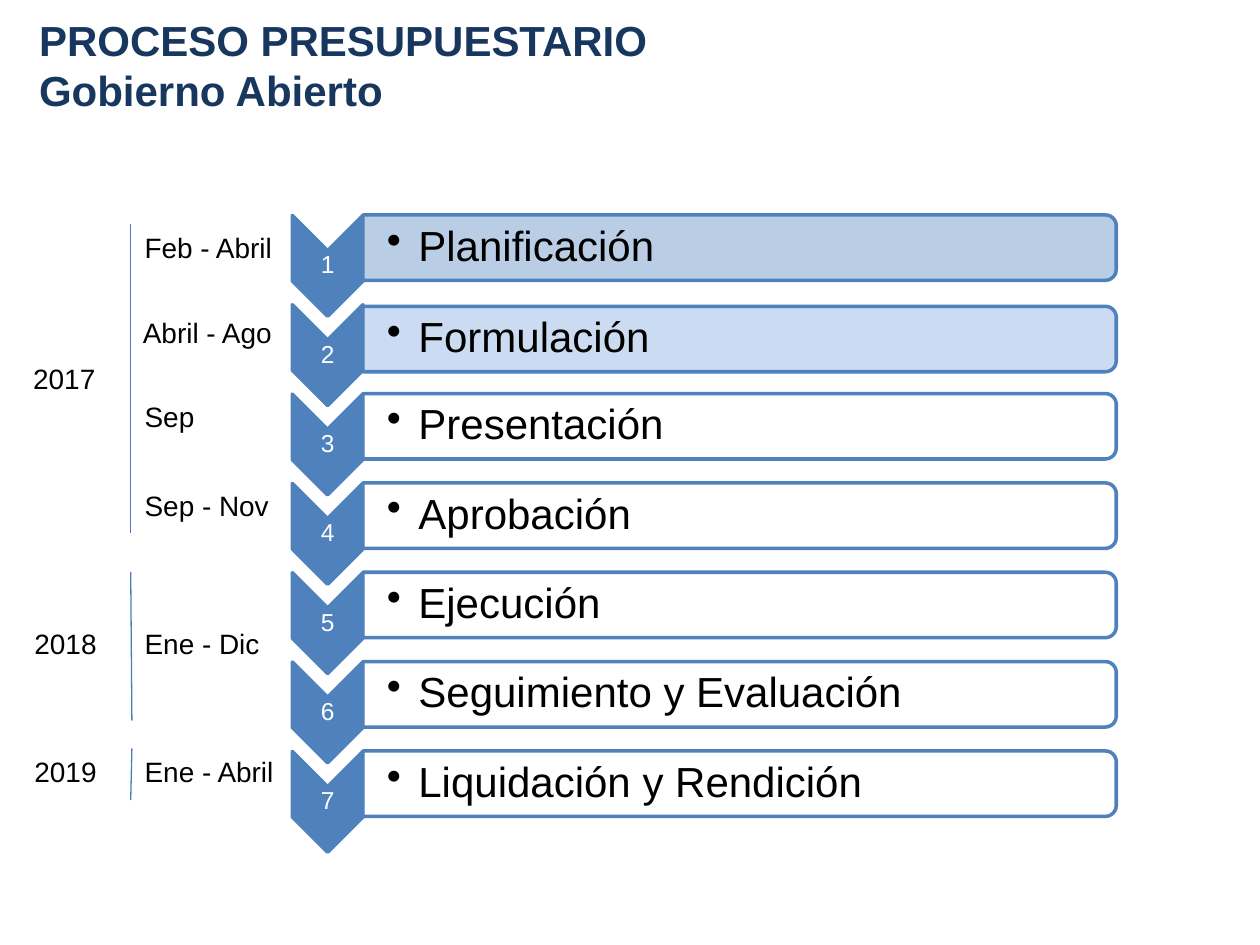
import pptx
import pptx.dml.color
import pptx.enum.shapes
import pptx.enum.text
import pptx.oxml.ns
import pptx.util
from lxml import etree

Pt = pptx.util.Pt
ALIGN = pptx.enum.text.PP_ALIGN
ANCHOR = pptx.enum.text.MSO_ANCHOR
PRESET = pptx.enum.shapes.MSO_SHAPE
FONT = "Arial"
COLORS = {
    "title": "17375E",
    "accent": "4F81BD",
    "bracket": "4B7EBC",
    "planning": "B9CDE5",
    "formulation": "C6D9F1",
    "white": "FFFFFF",
    "black": "000000",
}

ROW_PITCH = 51.05
FIRST_CHEVRON_Y = 151.9
FIRST_BAR_Y = 141.5
CHEVRON_X = 187.2
BAR_X = 422.6

# Name, fill, fill opacity in percent, vertical shift of the bar
STAGES = [
    ("Planificación", "planning", 100, 0),
    ("Formulación", "formulation", 90, 1.2),
    ("Presentación", "white", 90, 0),
    ("Aprobación", "white", 90, 0),
    ("Ejecución", "white", 90, 0),
    ("Seguimiento y Evaluación", "white", 90, 0),
    ("Liquidación y Rendición", "white", 90, 0),
]
# Label, left, top
MONTHS = [
    ("Feb - Abril", 75.6, 128.2),
    ("Abril - Ago", 74.6, 177),
    ("Sep", 75.6, 224.9),
    ("Sep - Nov", 75.6, 275.8),
    ("Ene - Dic", 75.6, 354.5),
    ("Ene - Abril", 75.6, 427.7),
]
# Label, left, top, start and end of the bracket line
YEARS = [
    ("2017", 2.9, 203, (74.7, 128.2), (74.7, 304.6)),
    ("2018", 3.6, 354.5, (74.7, 326.9), (75.4, 411.8)),
    ("2019", 3.6, 427.7, (75.4, 427.7), (74.7, 457.2)),
]


def rgb(name):
    return pptx.dml.color.RGBColor.from_string(COLORS[name])


def format_runs(paragraph, size, color, bold=False):
    for run in paragraph.runs:
        run.font.name = FONT
        run.font.size = Pt(size)
        run.font.bold = bold
        run.font.color.rgb = rgb(color)


def add_title(slide, text):
    title = slide.shapes.title
    title.left, title.top, title.width, title.height = Pt(15.1), Pt(0), Pt(476), Pt(74.2)
    frame = title.text_frame
    frame.text = text
    frame.auto_size = pptx.enum.text.MSO_AUTO_SIZE.NONE
    frame.vertical_anchor = ANCHOR.MIDDLE
    paragraph = frame.paragraphs[0]
    paragraph.alignment = ALIGN.LEFT
    format_runs(paragraph, 24, "title", bold=True)


def add_text(slide, text, left, top, width, height, size=16, color="black",
             align=ALIGN.LEFT, anchor=ANCHOR.TOP, margins=(7.2, 3.6, 7.2, 3.6)):
    box = slide.shapes.add_textbox(Pt(left), Pt(top), Pt(width), Pt(height))
    frame = box.text_frame
    frame.word_wrap = True
    frame.vertical_anchor = anchor
    (frame.margin_left, frame.margin_top,
     frame.margin_right, frame.margin_bottom) = map(Pt, margins)
    frame.text = text
    paragraph = frame.paragraphs[0]
    paragraph.alignment = align
    format_runs(paragraph, size, color)
    return paragraph


def add_bullet(paragraph, indent):
    properties = paragraph._p.get_or_add_pPr()
    properties.set("marL", str(Pt(indent)))
    properties.set("indent", str(-Pt(indent)))
    bullet = etree.SubElement(properties, pptx.oxml.ns.qn("a:buChar"))
    bullet.set("char", "•")


def add_turned_shape(slide, preset, center_x, center_y, length, breadth, fill, opacity=100):
    """Add a shape turned by 90 degrees around its centre."""
    shape = slide.shapes.add_shape(
        preset, Pt(center_x - length / 2), Pt(center_y - breadth / 2), Pt(length), Pt(breadth))
    shape.rotation = 90
    shape.shadow.inherit = False
    shape.fill.solid()
    shape.fill.fore_color.rgb = rgb(fill)
    shape.line.color.rgb = rgb("accent")
    shape.line.width = Pt(2)
    if opacity < 100:
        color = shape._element.spPr.find(
            pptx.oxml.ns.qn("a:solidFill") + "/" + pptx.oxml.ns.qn("a:srgbClr"))
        alpha = etree.SubElement(color, pptx.oxml.ns.qn("a:alpha"))
        alpha.set("val", str(opacity * 1000))


def add_stage(slide, index, name, fill, opacity, shift):
    chevron_y = FIRST_CHEVRON_Y + index * ROW_PITCH
    bar_y = FIRST_BAR_Y + index * ROW_PITCH + shift
    add_turned_shape(slide, PRESET.CHEVRON, CHEVRON_X, chevron_y, 57.6, 40.3, "accent")
    number = add_text(slide, str(index + 1), CHEVRON_X - 20.15, chevron_y - 8.65, 40.3, 17.3,
                      size=14, color="white", align=ALIGN.CENTER, anchor=ANCHOR.MIDDLE,
                      margins=(0.7, 0.7, 0.7, 0.7))
    number.line_spacing = 0.9
    add_turned_shape(slide, PRESET.ROUND_2_SAME_RECTANGLE, BAR_X, bar_y, 37.4, 430.5,
                     fill, opacity)
    label = add_text(slide, name, 207.4, bar_y - 16.9, 428.4, 33.8, size=24,
                     anchor=ANCHOR.MIDDLE, margins=(13.7, 1.2, 1.2, 1.2))
    label.line_spacing = 0.9
    add_bullet(label, 18)


def add_line(slide, start, end):
    connector = slide.shapes.add_connector(
        pptx.enum.shapes.MSO_CONNECTOR.STRAIGHT, *map(Pt, start + end))
    connector.line.color.rgb = rgb("bracket")
    connector.line.width = Pt(0.75)
    etree.SubElement(connector._element.spPr, pptx.oxml.ns.qn("a:effectLst"))


def main():
    presentation = pptx.Presentation()
    presentation.slide_width, presentation.slide_height = Pt(720), Pt(540)
    slide = presentation.slides.add_slide(presentation.slide_layouts.get_by_name("Title Only"))
    add_title(slide, "PROCESO PRESUPUESTARIO\vGobierno Abierto")
    for index, stage in enumerate(STAGES):
        add_stage(slide, index, *stage)
    for label, left, top in MONTHS:
        add_text(slide, label, left, top, 96.5, 26.6)
    for label, left, top, start, end in YEARS:
        add_line(slide, start, end)
        add_text(slide, label, left, top, 67.7, 26.6, align=ALIGN.CENTER)
    presentation.save("out.pptx")


if __name__ == "__main__":
    main()
